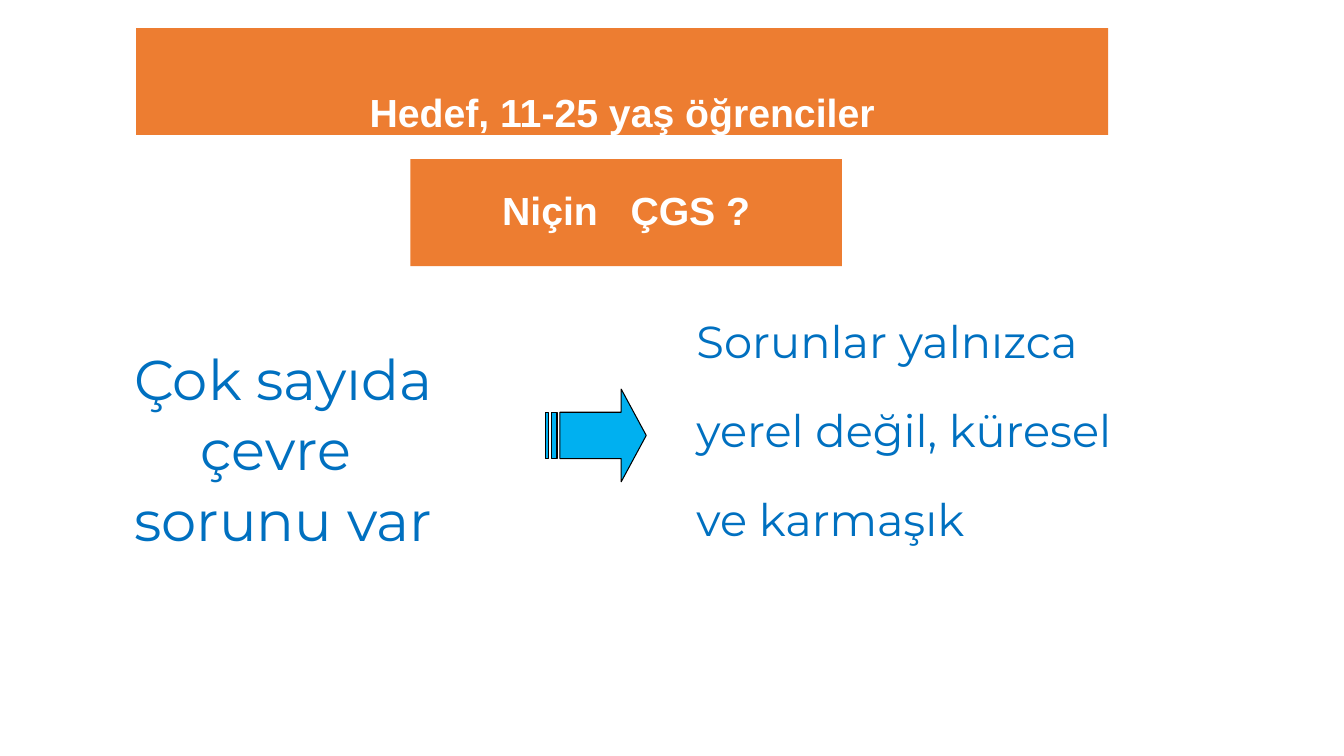
"""Build the slide on the target group and the reasons for ÇGS."""
from pptx import Presentation
from pptx.dml.color import RGBColor
from pptx.enum.shapes import MSO_SHAPE
from pptx.enum.text import MSO_ANCHOR, PP_ALIGN
from pptx.util import Inches, Pt

COLORS = {"orange": "ED7D31", "white": "FFFFFF", "blue": "0070C0",
          "sky": "00B0F0", "black": "000000"}


def color(name):
    return RGBColor.from_string(COLORS[name])


def add_run(para, text, font, size, tint, bold=False):
    run = para.add_run()
    run.text = text
    run.font.name = font
    run.font.size = Pt(size)
    run.font.bold = bold
    run.font.color.rgb = color(tint)
    return run


deck = Presentation()
deck.slide_width, deck.slide_height = Inches(13.33), Inches(7.5)
slide = deck.slides.add_slide(deck.slide_layouts[6])
shapes = slide.shapes

banners = [
    (4.07, 1.58, 4.28, ["Niçin", " ", "ÇGS ?"], MSO_ANCHOR.MIDDLE, 0.9),
    (1.35, 0.28, 9.64, ["Hedef, 11-25 yaş öğrenciler"], MSO_ANCHOR.BOTTOM, 1.0),
]
for left, top, width, parts, anchor, lead in banners:
    bar = shapes.add_shape(MSO_SHAPE.RECTANGLE, Inches(left), Inches(top),
                           Inches(width), Inches(1.06))
    bar.shadow.inherit = False
    bar.fill.solid()
    bar.fill.fore_color.rgb = color("orange")
    bar.line.fill.background()
    frame = bar.text_frame
    frame.word_wrap = True
    frame.vertical_anchor = anchor
    if anchor == MSO_ANCHOR.BOTTOM:
        frame.margin_left = frame.margin_right = frame.margin_bottom = 0
    para = frame.paragraphs[0]
    para.alignment = PP_ALIGN.CENTER
    para.line_spacing = lead
    for part in parts:
        run = add_run(para, part, "Arial", 28, "white", True)
        if part == " ":
            run.font._element.set("spc", "1556")

blocks = [
    (0.96, 3.44, 3.7, 2.2, 40, 0.9, PP_ALIGN.CENTER,
     ["Çok sayıda", "çevre ", "sorunu var"]),
    (6.81, 2.8, 5, 3.93, 32, 1.5, PP_ALIGN.LEFT,
     ["Sorunlar yalnızca", "yerel değil, küresel", "ve karmaşık"]),
]
for left, top, width, height, size, lead, align, lines in blocks:
    box = shapes.add_textbox(Inches(left), Inches(top), Inches(width), Inches(height))
    frame = box.text_frame
    frame.word_wrap = True
    for row, line in enumerate(lines):
        para = frame.add_paragraph() if row else frame.paragraphs[0]
        para.alignment = align
        para.line_spacing = lead
        para.space_before = Pt(0.18 * size if row else 0)
        props = para._p.get_or_add_pPr()
        props.set("marL", str(Inches(0.38)))
        props.set("indent", str(-Inches(0.38)))
        add_run(para, line, "Montserrat", size, "blue")

arrow = shapes.add_shape(MSO_SHAPE.STRIPED_RIGHT_ARROW, Inches(5.41), Inches(3.86),
                         Inches(1), Inches(0.92))
arrow.adjustments[0] = 0.5
arrow.adjustments[1] = 0.27
arrow.shadow.inherit = False
arrow.fill.solid()
arrow.fill.fore_color.rgb = color("sky")
arrow.line.color.rgb = color("black")
arrow.line.width = Pt(0.75)

deck.save("out.pptx")
